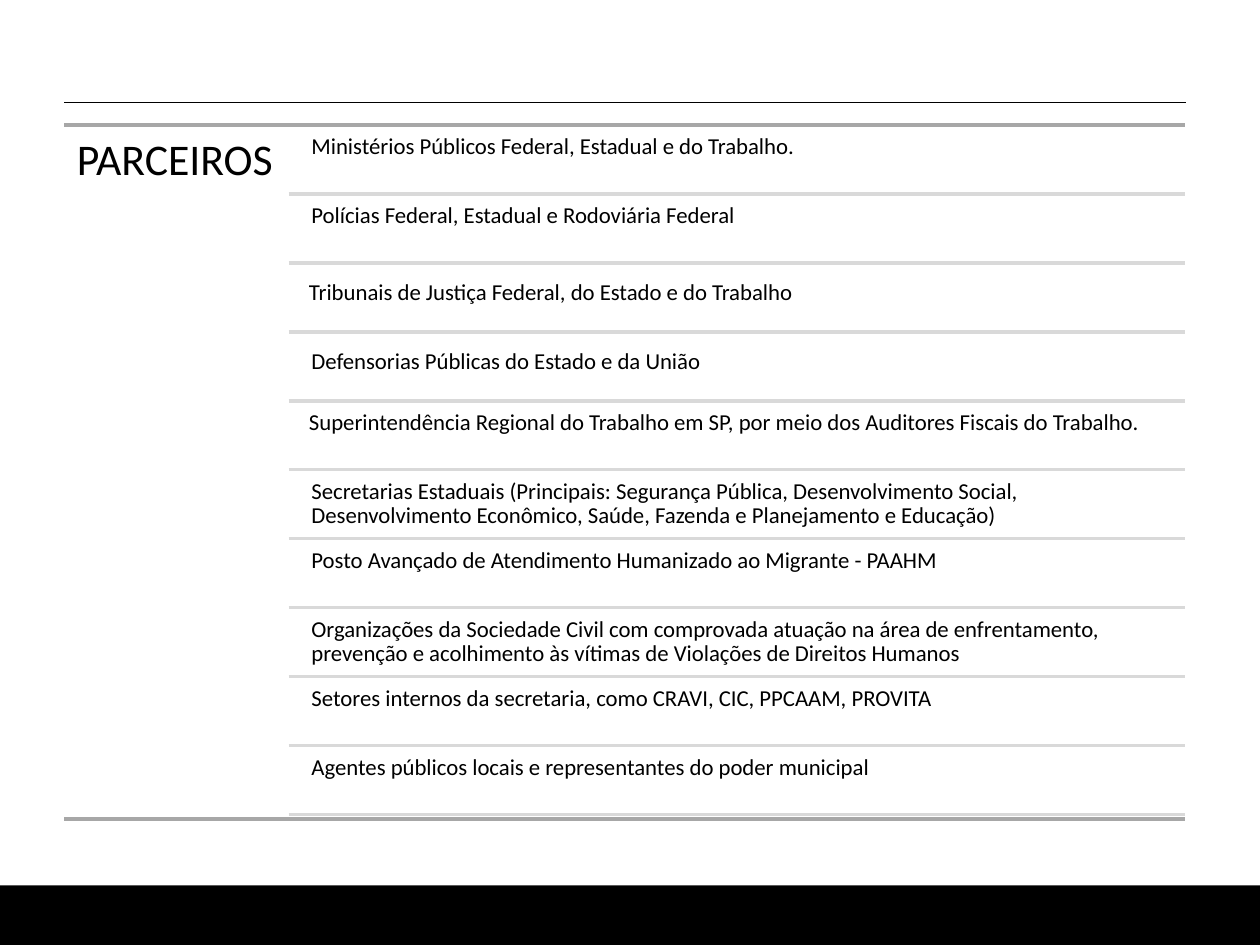
from pptx import Presentation
from pptx import util as u
from pptx.dml.color import RGBColor
from pptx.enum import shapes, text
from pptx.oxml.ns import qn
from lxml import etree

TITLE = "PARCEIROS"
PARTNERS = [
    ("Ministérios Públicos Federal, Estadual e do Trabalho.", 6.15, 0),
    ("Polícias Federal, Estadual e Rodoviária Federal", 6.15, 0),
    ("Tribunais de Justiça Federal, do Estado e do Trabalho", 6.1, 0.17),
    ("Defensorias Públicas do Estado e da União", 6.15, 0.17),
    ("Superintendência Regional do Trabalho em SP, por meio dos Auditores "
     "Fiscais do Trabalho.", 6.1, 0),
    ("Secretarias Estaduais (Principais: Segurança Pública, Desenvolvimento Social, "
     "Desenvolvimento Econômico, Saúde, Fazenda e Planejamento e Educação)", 6.15, 0),
    ("Posto Avançado de Atendimento Humanizado ao Migrante - PAAHM", 6.15, 0),
    ("Organizações da Sociedade Civil com comprovada atuação na área de "
     "enfrentamento, prevenção e acolhimento às vítimas de Violações de "
     "Direitos Humanos", 6.15, 0),
    ("Setores internos da secretaria, como CRAVI, CIC, PPCAAM, PROVITA", 6.15, 0),
    ("Agentes públicos locais e representantes do poder municipal", 6.15, 0),
]
LEFT, RIGHT, DIVIDER_LEFT = 1.3, 23.88, 5.82
TOP, BOTTOM = 2.52, 16.51
ROW_TOP, ROW_HEIGHT, ROW_PITCH = 2.59, 1.32, 1.39


def color(value):
    return RGBColor.from_string(value)


def add_rule(s, left, right, y, value, width):
    line = s.shapes.add_connector(shapes.MSO_CONNECTOR.STRAIGHT,
                                  u.Cm(left), u.Cm(y), u.Cm(right), u.Cm(y))
    line.line.color.rgb = color(value)
    line.line.width = u.Pt(width)
    etree.SubElement(line._element.spPr, qn("a:effectLst"))


def place(sp, left, top, width, height):
    sp.left, sp.top, sp.width, sp.height = map(u.Cm, (left, top, width, height))


def write(sp, words, size, inset):
    tf = sp.text_frame
    tf.text = words
    tf.word_wrap = True
    tf.auto_size = text.MSO_AUTO_SIZE.NONE
    tf.vertical_anchor = text.MSO_ANCHOR.TOP
    tf.margin_left = tf.margin_right = tf.margin_top = tf.margin_bottom = u.Cm(inset)
    p = tf.paragraphs[0]
    p.alignment = text.PP_ALIGN.LEFT
    p.line_spacing = 0.9
    p.font.name = "Calibri"
    p.font.size = u.Pt(size)
    p.font.color.rgb = color("000000")


def main():
    prs = Presentation()
    prs.slide_width, prs.slide_height = u.Cm(25.4), u.Cm(19.05)
    s = prs.slides.add_slide(prs.slide_layouts[5])

    footer = s.shapes.add_shape(shapes.MSO_SHAPE.RECTANGLE,
                                0, u.Cm(17.85), u.Cm(25.4), u.Cm(1.2))
    footer.shadow.inherit = False
    footer.fill.solid()
    footer.fill.fore_color.rgb = color("000000")
    footer.line.fill.background()

    add_rule(s, LEFT, 23.9, 2.07, "000000", 0.75)
    add_rule(s, LEFT, RIGHT, TOP, "A7A7A7", 2)

    title = s.shapes.title
    place(title, LEFT, TOP, DIVIDER_LEFT - LEFT, BOTTOM - TOP)
    write(title, TITLE, 25, 0.25)

    for i, (partner, left, drop) in enumerate(PARTNERS):
        top = ROW_TOP + i * ROW_PITCH
        sp = s.shapes.add_textbox(0, 0, 0, 0)
        place(sp, left, top + drop, RIGHT - left, ROW_HEIGHT)
        write(sp, partner, 13, 0.13)
        add_rule(s, DIVIDER_LEFT, RIGHT, top + ROW_HEIGHT, "D9D9D9", 2)

    add_rule(s, LEFT, RIGHT, BOTTOM, "A7A7A7", 2)
    prs.save("out.pptx")


if __name__ == "__main__":
    main()
